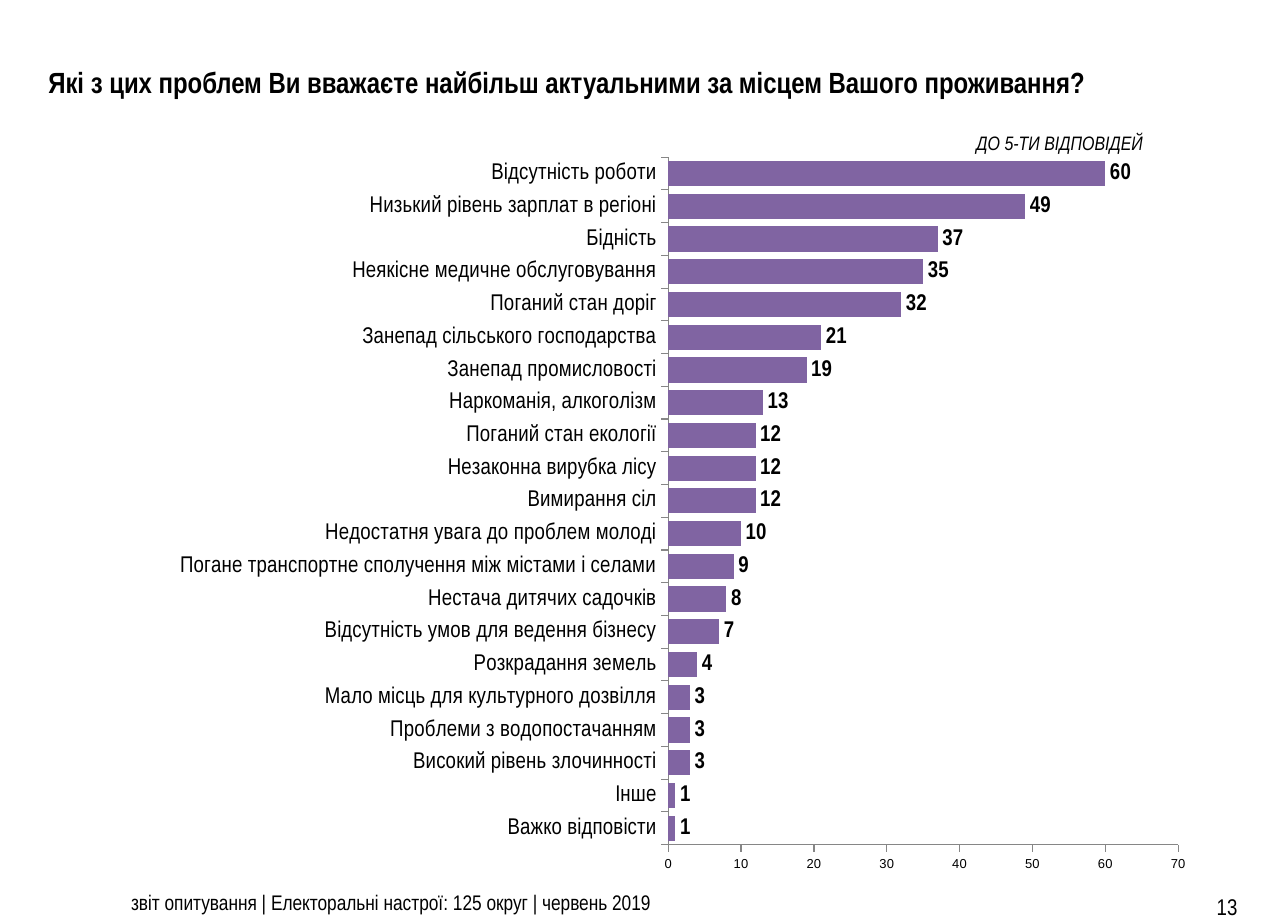
import pptx
import pptx.chart.data
import pptx.dml.color
import pptx.enum.chart
import pptx.enum.text
import pptx.oxml
import pptx.oxml.ns
import pptx.util
from pptx.util import Cm

BLACK = pptx.dml.color.RGBColor(0x00, 0x00, 0x00)
PURPLE = pptx.dml.color.RGBColor(0x80, 0x64, 0xA2)
GREY = pptx.dml.color.RGBColor(0x86, 0x86, 0x86)

PROBLEMS = [
    ("Вiдсутнiсть роботи", 60),
    ("Низький рiвень зарплат в регiонi", 49),
    ("Бiднiсть", 37),
    ("Неякiсне медичне обслуговування", 35),
    ("Поганий стан дорiг", 32),
    ("Занепад сiльського господарства", 21),
    ("Занепад промисловостi", 19),
    ("Наркоманiя, алкоголiзм", 13),
    ("Поганий стан екологiї", 12),
    ("Незаконна вирубка лiсу", 12),
    ("Вимирання сiл", 12),
    ("Недостатня увага до проблем молодi", 10),
    ("Погане транспортне сполучення мiж мiстами i селами", 9),
    ("Нестача дитячих садочкiв", 8),
    ("Вiдсутнiсть умов для ведення бiзнесу", 7),
    ("Розкрадання земель", 4),
    ("Мало мiсць для культурного дозвiлля", 3),
    ("Проблеми з водопостачанням", 3),
    ("Високий рiвень злочинностi", 3),
    ("Iнше", 1),
    ("Важко вiдповiсти", 1),
]


class SurveySlide:
    """Adds text and bar charts to one slide in a shared style."""

    text_font = "Arial Narrow"
    scale_font = "Arial"

    def __init__(self, slide):
        self.slide = slide

    def style_font(self, font, size, name=text_font, bold=False, italic=False):
        font.name = name
        font.size = pptx.util.Pt(size)
        font.bold = bold
        font.italic = italic
        font.color.rgb = BLACK

    def add_text(self, text, left, top, width, height, size, middle=False,
                 right=False, right_inset=0.25, **style):
        shape = self.slide.shapes.add_textbox(Cm(left), Cm(top), Cm(width), Cm(height))
        frame = shape.text_frame
        frame.word_wrap = True
        frame.margin_right = Cm(right_inset)
        anchors = pptx.enum.text.MSO_ANCHOR
        frame.vertical_anchor = anchors.MIDDLE if middle else anchors.TOP
        paragraph = frame.paragraphs[0]
        paragraph.text = text
        alignments = pptx.enum.text.PP_ALIGN
        paragraph.alignment = alignments.RIGHT if right else alignments.LEFT
        self.style_font(paragraph.font, size, **style)

    def add_bar_chart(self, rows, left, top, width, height, plot_area):
        data = pptx.chart.data.CategoryChartData(number_format="0")
        bottom_up = rows[::-1]
        data.categories = [label for label, value in bottom_up]
        data.add_series("Series 1", [value for label, value in bottom_up])
        chart = self.slide.shapes.add_chart(
            pptx.enum.chart.XL_CHART_TYPE.BAR_CLUSTERED,
            Cm(left), Cm(top), Cm(width), Cm(height), data).chart
        chart.has_title = False
        chart.has_legend = False
        self.style_font(chart.font, 18, self.scale_font)

        plot = chart.plots[0]
        plot.gap_width = 30
        plot.vary_by_categories = False
        fill = plot.series[0].format.fill
        fill.solid()
        fill.fore_color.rgb = PURPLE
        plot.has_data_labels = True
        labels = plot.data_labels
        labels.show_value = True
        labels.number_format = "0"
        labels.number_format_is_linked = False
        labels.position = pptx.enum.chart.XL_LABEL_POSITION.OUTSIDE_END
        self.style_font(labels.font, 14, bold=True)

        self.style_axis(chart.category_axis, 14, self.text_font)
        self.style_axis(chart.value_axis, 8, self.scale_font)
        chart.value_axis.minimum_scale = 0
        chart.value_axis.maximum_scale = 70
        chart.value_axis.major_unit = 10
        self.place_plot(chart, plot_area)

    def style_axis(self, axis, size, name):
        axis.has_major_gridlines = False
        axis.major_tick_mark = pptx.enum.chart.XL_TICK_MARK.OUTSIDE
        axis.minor_tick_mark = pptx.enum.chart.XL_TICK_MARK.NONE
        axis.format.line.color.rgb = GREY
        axis.format.line.width = pptx.util.Pt(0.75)
        self.style_font(axis.tick_labels.font, size, name)

    def place_plot(self, chart, plot_area):
        settings = [("layoutTarget", "inner"), ("xMode", "edge"), ("yMode", "edge")]
        settings += zip("xywh", plot_area)
        children = "".join(f'<c:{tag} val="{value}"/>' for tag, value in settings)
        layout = pptx.oxml.parse_xml(
            f'<c:layout {pptx.oxml.ns.nsdecls("c")}>'
            f"<c:manualLayout>{children}</c:manualLayout></c:layout>")
        area = chart.plots[0]._element.getparent()
        for existing in area.findall(pptx.oxml.ns.qn("c:layout")):
            area.remove(existing)
        area.insert(0, layout)


def main():
    presentation = pptx.Presentation()
    presentation.slide_width = Cm(28)
    presentation.slide_height = Cm(20)
    survey = SurveySlide(presentation.slides.add_slide(presentation.slide_layouts[6]))
    survey.add_text("13", 26.2, 19.4, 1.4, 0.6, 14, middle=True)
    survey.add_text("звіт опитування | Електоральні настрої: 125 округ | червень 2019",
                    2.6, 19.2, 17.3, 0.8, 13)
    survey.add_text("Які з цих проблем Ви вважаєте найбільш актуальними за місцем "
                    "Вашого проживання?", 0.8, 1.3, 23.8, 0.96, 18, middle=True, bold=True)
    survey.add_bar_chart(PROBLEMS, 0.8, 3.1, 26.4, 15.9, (0.52, 0.02, 0.42, 0.94))
    survey.add_text("ДО 5-ТИ ВІДПОВІДЕЙ", 11.2, 2.72, 14, 0.76, 12,
                    right=True, right_inset=0.35, italic=True)
    presentation.save("out.pptx")


if __name__ == "__main__":
    main()
